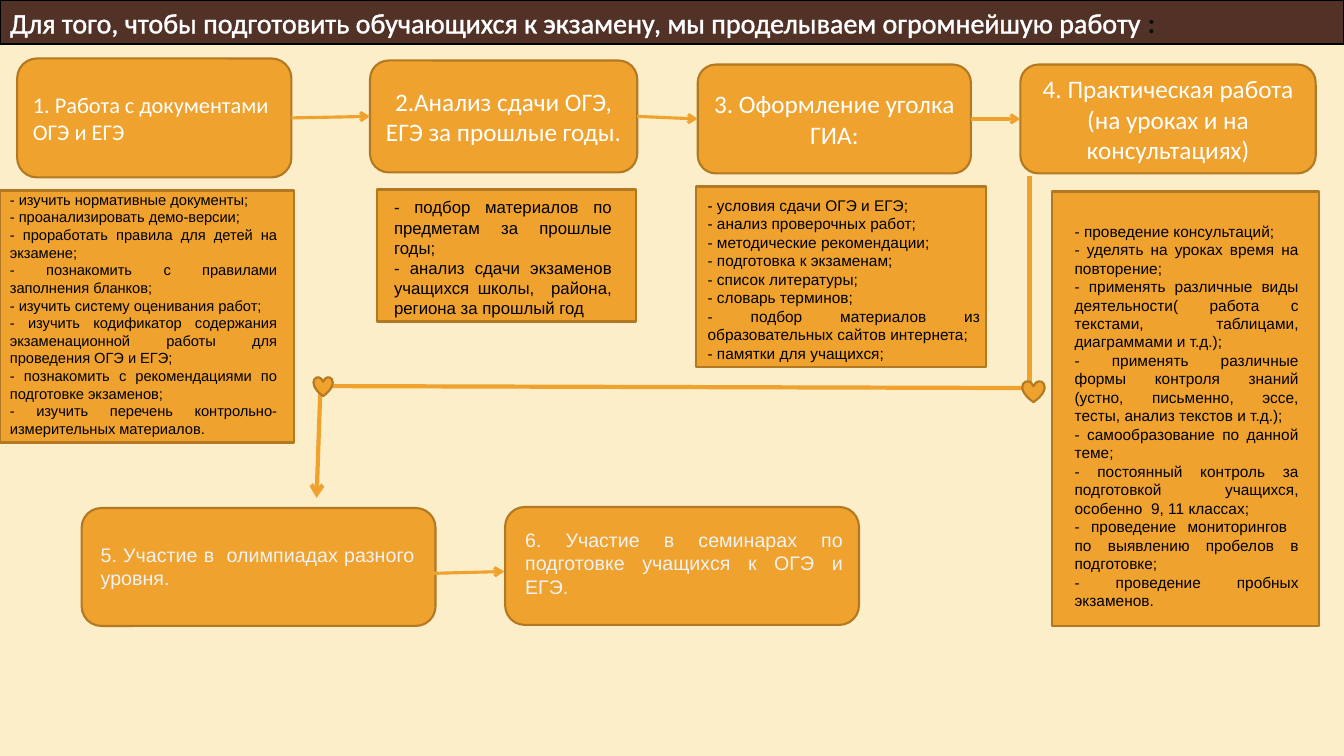
from lxml.etree import SubElement
from pptx import Presentation
from pptx.dml.color import RGBColor
from pptx.enum.shapes import MSO_CONNECTOR as Connector, MSO_SHAPE as Shape
from pptx.enum.text import MSO_ANCHOR as Anchor, PP_ALIGN as Align
from pptx.oxml import parse_xml
from pptx.oxml.ns import nsdecls, qn
from pptx.util import Inches, Pt

CREAM = RGBColor(0xFB, 0xEE, 0xC9)
BROWN = RGBColor(0x52, 0x32, 0x27)
ORANGE = RGBColor(0xF0, 0xA2, 0x2E)
OCHRE = RGBColor(0xB2, 0x78, 0x22)
AMBER = RGBColor(0xC8, 0x7D, 0x0E)
BLACK = RGBColor(0, 0, 0)
INK = RGBColor(0x0D, 0x0D, 0x0D)
WHITE = RGBColor(0xFF, 0xFF, 0xFF)
PALE = RGBColor(0xF2, 0xF2, 0xF2)

STAGES = [
    ((0.17, 0.58, 2.72, 1.18), "1. Работа с документами ОГЭ и ЕГЭ", 16, Align.LEFT),
    ((3.67, 0.6, 2.65, 1.11), "2.Анализ сдачи ОГЭ, ЕГЭ за прошлые годы.", 18, Align.CENTER),
    ((6.92, 0.64, 2.71, 1.08), "3. Оформление уголка ГИА:", 18, Align.CENTER),
    ((10.12, 0.64, 2.93, 1.08), "4. Практическая работа (на уроках и на консультациях)", 18, Align.CENTER),
]

TASKS = [
    ((0, 1.89, 2.92, 2.5), (0, 1.83, 2.85, 2.57), 10.5, [
        "- изучить нормативные документы;",
        "- проанализировать демо-версии;",
        "- проработать правила для детей на экзамене;",
        "- познакомить с правилами заполнения бланков;",
        "- изучить систему оценивания работ;",
        "- изучить кодификатор содержания экзаменационной работы для проведения ОГЭ и ЕГЭ;",
        "- познакомить с рекомендациями по подготовке экзаменов;",
        "- изучить перечень контрольно-измерительных материалов.",
    ]),
    ((3.74, 1.88, 2.57, 1.31), (3.81, 1.9, 2.36, 1.31), 12, [
        "- подбор материалов по предметам за прошлые годы;",
        "- анализ сдачи экзаменов учащихся школы,  района, региона за прошлый год",
    ]),
    ((6.9, 1.85, 2.88, 1.79), (6.92, 1.86, 2.9, 1.82), 11, [
        "- условия сдачи ОГЭ и ЕГЭ;",
        "- анализ проверочных работ;",
        "- методические рекомендации;",
        "- подготовка к экзаменам;",
        "- список литературы;",
        "- словарь терминов;",
        "- подбор материалов из образовательных сайтов интернета;",
        "- памятки для учащихся;",
    ]),
    ((10.43, 1.9, 2.65, 4.31), (10.56, 2.13, 2.42, 3.99), 11, [
        "- проведение консультаций;",
        "- уделять на уроках время на повторение;",
        "- применять различные виды деятельности( работа с текстами, таблицами, диаграммами и т.д.);",
        "- применять различные формы контроля знаний (устно, письменно, эссе, тесты, анализ текстов и т.д.);",
        "- самообразование по данной теме;",
        "- постоянный контроль за подготовкой учащихся, особенно  9, 11 классах;",
        "- проведение мониторингов  по выявлению пробелов в подготовке;",
        "- проведение пробных экзаменов.",
    ]),
]

EVENTS = [
    ((0.81, 5.04, 3.51, 1.17), (0.9, 5.33, 3.31, 0.57),
     "5. Участие в  олимпиадах разного уровня."),
    ((5.01, 5.03, 3.51, 1.17), (5.11, 5.3, 3.35, 0.57),
     "6. Участие в семинарах по подготовке учащихся к ОГЭ и ЕГЭ."),
]


def write(para, text, size=11, font="Arial", color=BLACK, bold=None, outline=None, align=None):
    if align is not None:
        para.alignment = align
    span = para.add_run()
    span.text = text
    span.font.size = Pt(size)
    span.font.name = font
    span.font.color.rgb = color
    span.font.bold = bold
    if outline:
        edge_color, edge_width = outline
        span.font._element.insert(0, parse_xml(
            f'<a:ln {nsdecls("a")} w="{Pt(edge_width)}"><a:solidFill>'
            f'<a:srgbClr val="{edge_color}"/></a:solidFill></a:ln>'))


class Board:
    def __init__(self, page, fill=ORANGE, edge=OCHRE):
        self.page = page
        self.fill = fill
        self.edge = edge
        page.background.fill.solid()
        page.background.fill.fore_color.rgb = CREAM

    def box(self, kind, place, fill=None, edge=None):
        shape = self.page.shapes.add_shape(kind, *map(Inches, place))
        shape.shadow.inherit = False
        shape.fill.solid()
        shape.fill.fore_color.rgb = fill or self.fill
        shape.line.color.rgb = edge or self.edge
        shape.line.width = Pt(1.5)
        return shape

    def text(self, place, lines, **style):
        frame = self.page.shapes.add_textbox(*map(Inches, place)).text_frame
        frame.word_wrap = True
        frame.vertical_anchor = Anchor.MIDDLE
        for index, line in enumerate(lines):
            para = frame.add_paragraph() if index else frame.paragraphs[0]
            write(para, line, align=Align.JUSTIFY, **style)

    def line(self, start, end, width=2.25, arrow=True):
        link = self.page.shapes.add_connector(Connector.STRAIGHT, *map(Inches, start + end))
        link.line.color.rgb = self.fill
        link.line.width = Pt(width)
        if arrow:
            SubElement(link.line._get_or_add_ln(), qn("a:tailEnd"), type="arrow")
        SubElement(link._element.spPr, qn("a:effectLst"))
        return link

    def join(self, left, right):
        link = self.line((0, 0), (1, 1))
        link.begin_connect(left, 3)
        link.end_connect(right, 1)


def main():
    deck = Presentation()
    deck.slide_width = Inches(13.33)
    deck.slide_height = Inches(7.5)
    board = Board(deck.slides.add_slide(deck.slide_layouts[6]))

    title = board.box(Shape.RECTANGLE, (0, 0, 13.33, 0.44), BROWN, BLACK)
    heading = title.text_frame.paragraphs[0]
    write(heading, "Для того, чтобы подготовить обучающихся к экзамену, мы проделываем огромнейшую работу ",
          size=20, font="Calibri", color=WHITE, outline=(WHITE, 1.45), align=Align.LEFT)
    write(heading, ":", size=20, font="Calibri", color=INK, bold=True, outline=(AMBER, 1.5))

    stages = []
    for place, text, size, align in STAGES:
        stage = board.box(Shape.ROUNDED_RECTANGLE, place)
        write(stage.text_frame.paragraphs[0], text, size=size, font="Calibri", color=WHITE, align=align)
        stages.append(stage)
    for left, right in zip(stages, stages[1:]):
        board.join(left, right)

    for place, text_place, size, lines in TASKS:
        board.box(Shape.RECTANGLE, place)
        board.text(text_place, lines, size=size)

    board.line((10.21, 1.75), (10.21, 3.88), width=3, arrow=False)
    board.line((10.32, 3.85), (3.17, 3.83), width=3, arrow=False)
    board.line((3.18, 3.78), (3.14, 4.94), width=3)
    for place in ((10.14, 3.78, 0.22, 0.21), (3.11, 3.74, 0.19, 0.19)):
        board.box(Shape.HEART, place)

    for place, text_place, text in EVENTS:
        board.box(Shape.ROUNDED_RECTANGLE, place)
        board.text(text_place, [text], size=14, color=PALE)
    board.line((4.22, 5.69), (5, 5.67))

    deck.save("out.pptx")


if __name__ == "__main__":
    main()
